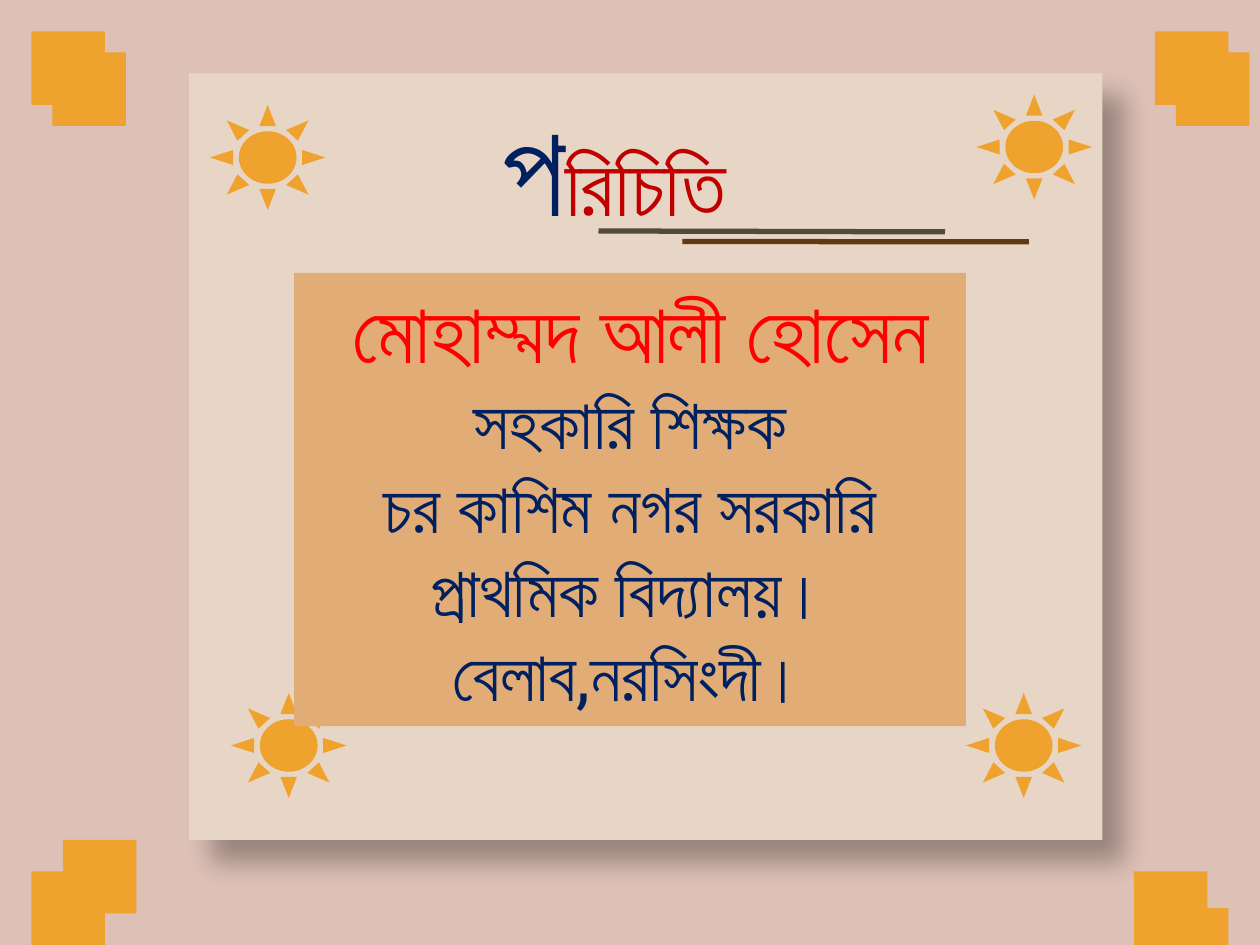
from lxml.etree import SubElement
from pptx import Presentation
from pptx.dml.color import RGBColor
from pptx.enum.shapes import MSO_CONNECTOR, MSO_SHAPE
from pptx.enum.text import MSO_ANCHOR, MSO_AUTO_SIZE, PP_ALIGN
from pptx.oxml.ns import qn
from pptx.util import Pt

FONT = "Roboto"
ROSE, CREAM, AMBER, TAN = "DDC0B6", "E7D6C5", "F0A22E", "E2AC76"
NAVY, CRIMSON, RED = "002060", "C00000", "FF0000"
OLIVE, BROWN = "534B38", "603A14"


def color(value):
    return RGBColor.from_string(value)


class SlideBuilder:
    def __init__(self, page):
        self.page = page

    def shape(self, kind, left, top, width, height, fill):
        shape = self.page.shapes.add_shape(kind, Pt(left), Pt(top), Pt(width), Pt(height))
        shape.shadow.inherit = False
        shape.fill.solid()
        shape.fill.fore_color.rgb = color(fill)
        shape.line.fill.background()
        return shape

    def panel(self, left, top, width, height, fill):
        panel = self.shape(MSO_SHAPE.RECTANGLE, left, top, width, height, fill)
        effects = panel.element.spPr.find(qn("a:effectLst"))
        shadow = SubElement(effects, qn("a:outerShdw"), blurRad=str(Pt(15)), dist=str(Pt(18)),
                            dir="2700000", algn="tl", rotWithShape="0")
        tone = SubElement(shadow, qn("a:srgbClr"), val="000000")
        SubElement(tone, qn("a:alpha"), val="30000")

    def rule(self, left, top, right, bottom, tone):
        line = self.page.shapes.add_connector(
            MSO_CONNECTOR.STRAIGHT, Pt(left), Pt(top), Pt(right), Pt(bottom))
        line.line.color.rgb = color(tone)
        line.line.width = Pt(3)
        SubElement(line.element.spPr, qn("a:effectLst"))

    def title(self, left, top, width, height, parts):
        title = self.page.shapes.title
        title.left, title.top, title.width, title.height = Pt(left), Pt(top), Pt(width), Pt(height)
        self.page.shapes.element.append(title.element)
        self.fill_text(title.text_frame, [parts])

    def text_panel(self, left, top, width, height, fill, lines):
        box = self.shape(MSO_SHAPE.RECTANGLE, left, top, width, height, fill)
        self.fill_text(box.text_frame, [[line] for line in lines])

    def fill_text(self, frame, lines):
        frame.word_wrap = True
        frame.vertical_anchor = MSO_ANCHOR.TOP
        frame.auto_size = MSO_AUTO_SIZE.SHAPE_TO_FIT_TEXT
        for index, parts in enumerate(lines):
            para = frame.add_paragraph() if index else frame.paragraphs[0]
            para.alignment = PP_ALIGN.CENTER
            for text, size, tone in parts:
                span = para.add_run()
                span.text = text
                span.font.size = Pt(size)
                span.font.color.rgb = color(tone)
                span.font.name = FONT
                SubElement(span.font._element, qn("a:cs"), typeface=FONT)


def main():
    deck = Presentation()
    deck.slide_width, deck.slide_height = Pt(720), Pt(540)
    builder = SlideBuilder(deck.slides.add_slide(deck.slide_layouts[5]))

    builder.shape(MSO_SHAPE.RECTANGLE, 0, 0, 720, 564, ROSE)
    builder.panel(108, 42, 522, 438, CREAM)
    corner_squares = [(660, 18), (672, 30), (660, 519), (648, 498),
                      (18, 18), (30, 30), (18, 498), (36, 480)]
    for left, top in corner_squares:
        builder.shape(MSO_SHAPE.RECTANGLE, left, top, 42, 42, AMBER)
    for left, top in [(558, 54), (132, 396), (120, 60), (552, 396)]:
        builder.shape(MSO_SHAPE.SUN, left, top, 66, 60, AMBER)

    builder.title(222, 48, 258, 94.5, [("প", 72, NAVY), ("রিচিতি", 48, CRIMSON)])
    builder.text_panel(168, 156, 384, 259, TAN, [
        (" মোহাম্মদ আলী হোসেন", 48, RED),
        ("সহকারি শিক্ষক", 40, NAVY),
        ("চর কাশিম নগর সরকারি প্রাথমিক বিদ্যালয়।", 40, NAVY),
        ("বেলাব,নরসিংদী।", 40, NAVY),
    ])
    builder.rule(342, 132, 540, 132.5, OLIVE)
    builder.rule(390, 138, 588, 138.2, BROWN)
    deck.save("out.pptx")


if __name__ == "__main__":
    main()
